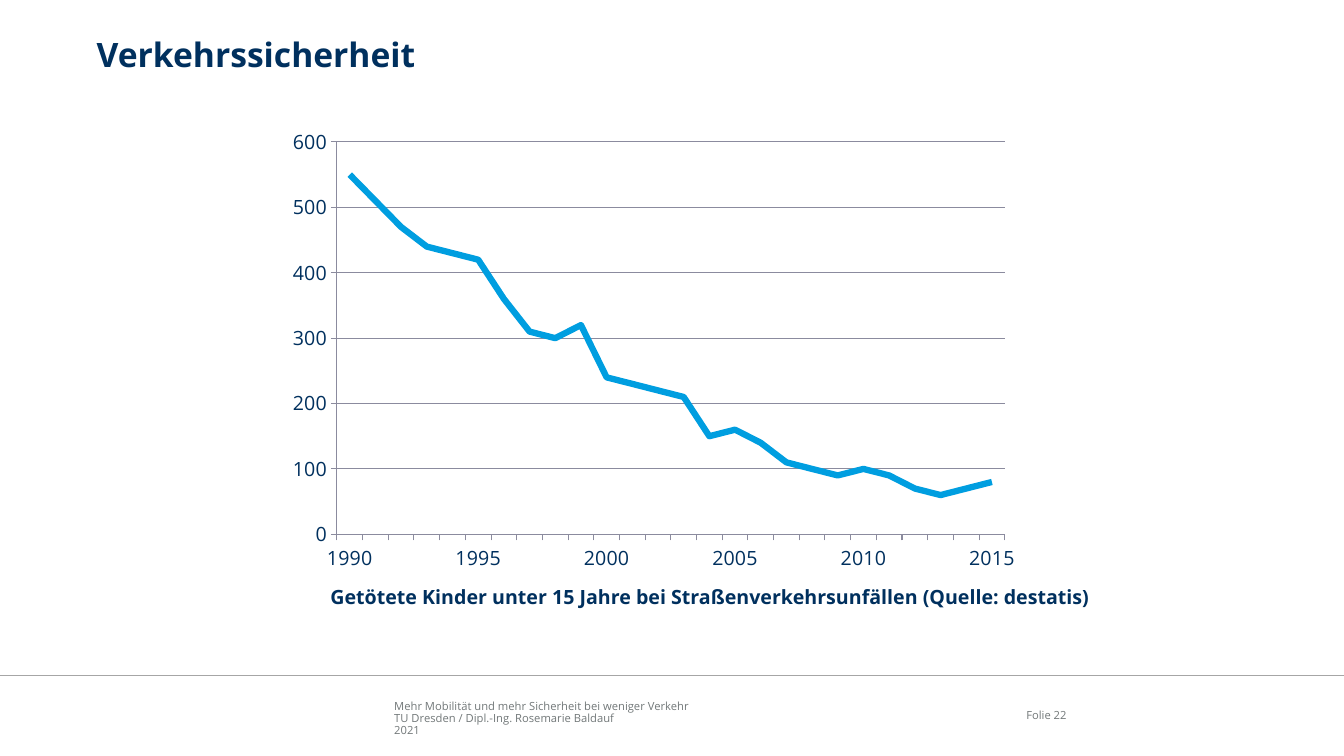
from lxml import etree
from pptx import Presentation, util as u
from pptx.chart import data
from pptx.dml.color import RGBColor
from pptx.enum import chart as ch, shapes, text
from pptx.oxml.ns import qn

HUES = {"navy": "00305E", "blue": "009EE0", "gray": "727879", "rule": "A6A6A6", "grid": "8B8B9E"}
FACE = "Open Sans"
DEATHS = [550, 510, 470, 440, 430, 420, 360, 310, 300, 320, 240, 230, 220,
          210, 150, 160, 140, 110, 100, 90, 100, 90, 70, 60, 70, 80]


def color(name):
    """Return the named colour."""
    return RGBColor.from_string(HUES[name])


def style(font, size, hue, bold=False):
    """Set the typeface, size, weight and colour of a font."""
    looks = {"name": FACE, "size": u.Pt(size), "bold": bold}
    for key, val in looks.items():
        setattr(font, key, val)
    font.color.rgb = color(hue)


def write(slide, box, lines, size, hue, bold=False, anchor="TOP", align="LEFT"):
    """Place lines of text in the box."""
    frame = slide.shapes.add_textbox(*map(u.Inches, box)).text_frame
    traits = {"word_wrap": True, "vertical_anchor": getattr(text.MSO_ANCHOR, anchor),
              "margin_left": 0, "margin_right": 0, "margin_top": 0, "margin_bottom": 0}
    for key, val in traits.items():
        setattr(frame, key, val)
    frame.text = "\n".join(lines)
    for para in frame.paragraphs:
        para.alignment = getattr(text.PP_ALIGN, align)
        para.line_spacing = 0.9
        for run in para.runs:
            style(run.font, size, hue, bold)


def place(plot):
    """Fix the inner plot area inside the chart."""
    layout = plot.find(qn("c:layout"))
    if layout is None:
        layout = etree.Element(qn("c:layout"))
        plot.insert(0, layout)
    manual = etree.SubElement(layout, qn("c:manualLayout"))
    parts = {"layoutTarget": "inner", "xMode": "edge", "yMode": "edge",
             "x": 0.078, "y": 0.05, "w": 0.888, "h": 0.85}
    for key, val in parts.items():
        etree.SubElement(manual, qn("c:" + key)).set("val", str(val))


def graph(slide, box):
    """Draw the line chart of deaths per year in the box."""
    table = data.CategoryChartData()
    table.categories = [str(year) if year % 5 == 0 else "" for year in range(1990, 2016)]
    table.add_series("Series 1", DEATHS)
    chart = slide.shapes.add_chart(ch.XL_CHART_TYPE.LINE, *map(u.Inches, box), table).chart
    chart.has_legend = chart.has_title = False
    style(chart.font, 10, "navy")
    for axis in (chart.category_axis, chart.value_axis):
        axis.major_tick_mark = ch.XL_TICK_MARK.OUTSIDE
        style(axis.tick_labels.font, 14, "navy")
        axis.format.line.color.rgb = color("grid")
        axis.format.line.width = u.Pt(0.75)
    scale = chart.value_axis
    limits = {"minimum_scale": 0, "maximum_scale": 600, "major_unit": 100,
              "has_major_gridlines": True}
    for key, val in limits.items():
        setattr(scale, key, val)
    scale.major_gridlines.format.line.color.rgb = color("grid")
    scale.major_gridlines.format.line.width = u.Pt(0.75)
    chart.plots[0].vary_by_categories = False
    curve = chart.plots[0].series[0]
    curve.smooth = False
    curve.marker.style = ch.XL_MARKER_STYLE.NONE
    curve.format.line.color.rgb = color("blue")
    curve.format.line.width = u.Pt(4.5)
    place(chart.element.find(".//" + qn("c:plotArea")))


def footer(slide, box):
    """Draw the rule, the credits and the page number in the box."""
    left, top, width, _ = box
    rule = slide.shapes.add_connector(shapes.MSO_CONNECTOR.STRAIGHT, *map(
        u.Inches, (left, top, left + width, top)))
    rule.line.color.rgb = color("rule")
    rule.line.width = u.Pt(1)
    etree.SubElement(rule.element.spPr, qn("a:effectLst"))
    credits = ["Mehr Mobilität und mehr Sicherheit bei weniger Verkehr",
               "TU Dresden / Dipl.-Ing. Rosemarie Baldauf", "2021"]
    write(slide, (left + 3.91, top + 0.21, 5.67, 0.4), credits, 8, "gray", anchor="BOTTOM")
    write(slide, (left + 9.81, top + 0.2, 0.77, 0.4), ["Folie 22"], 8, "gray",
          anchor="MIDDLE", align="RIGHT")


def main():
    """Build and save the slide."""
    deck = Presentation()
    deck.slide_width, deck.slide_height = u.Inches(13.33), u.Inches(7.5)
    slide = deck.slides.add_slide(deck.slide_layouts[6])
    write(slide, (0.96, 0.38, 11.57, 0.75), ["Verkehrssicherheit"], 24, "navy", True)
    graph(slide, (2.76, 1.18, 7.46, 4.58))
    write(slide, (2.76, 5.76, 8.57, 0.35),
          ["Getötete Kinder unter 15 Jahre bei Straßenverkehrsunfällen (Quelle: destatis)"],
          14, "navy", True, "MIDDLE", "CENTER")
    footer(slide, (0, 6.7, 13.33, 0.8))
    deck.save("out.pptx")


if __name__ == "__main__":
    main()
